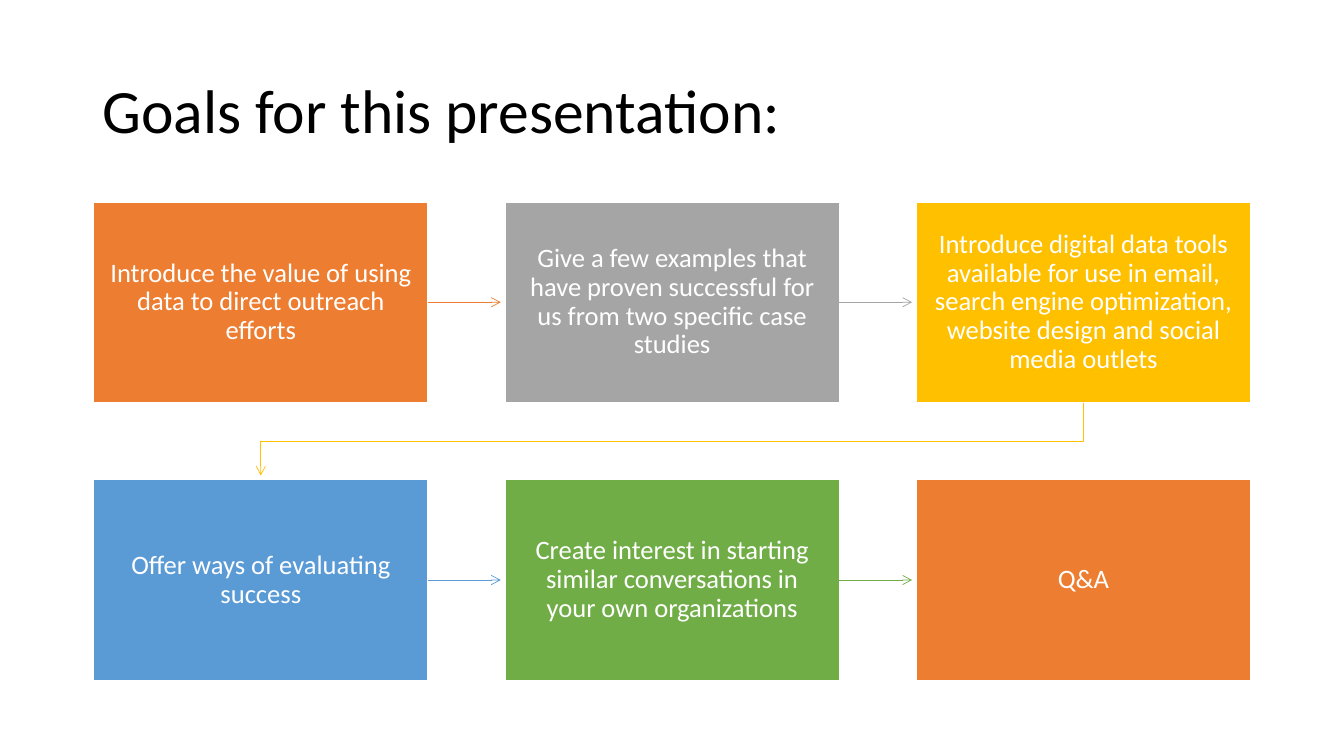
import pptx
import pptx.util
import pptx.dml.color
import pptx.enum.shapes
import pptx.enum.text
import pptx.oxml.ns
import lxml.etree

Pt = pptx.util.Pt
PP_ALIGN = pptx.enum.text.PP_ALIGN


def write(s, text, size, color, align=PP_ALIGN.LEFT, margins=(7.2, 3.6)):
    """Fill a shape with one middle-anchored, wrapped paragraph."""
    tf = s.text_frame
    tf.word_wrap = True
    tf.vertical_anchor = pptx.enum.text.MSO_ANCHOR.MIDDLE
    tf.margin_left = tf.margin_right = Pt(margins[0])
    tf.margin_top = tf.margin_bottom = Pt(margins[1])
    p = tf.paragraphs[0]
    p.alignment = align
    p.line_spacing = 0.9
    r = p.add_run()
    r.text = text
    r.font.name = "Calibri"
    r.font.size = Pt(size)
    r.font.color.rgb = pptx.dml.color.RGBColor.from_string(color)


def style_arrow(s, color):
    """Give a line its colour, width and open arrowhead, without shadow."""
    s.line.color.rgb = pptx.dml.color.RGBColor.from_string(color)
    s.line.width = Pt(0.5)
    qn = pptx.oxml.ns.qn
    ln = s._element.spPr.find(qn("a:ln"))
    lxml.etree.SubElement(ln, qn("a:tailEnd"), type="arrow")
    if s._element.spPr.find(qn("a:effectLst")) is None:
        lxml.etree.SubElement(s._element.spPr, qn("a:effectLst"))


prs = pptx.Presentation()
prs.slide_width, prs.slide_height = Pt(960), Pt(540)
slide = prs.slides.add_slide(prs.slide_layouts[6])

title = slide.shapes.add_textbox(Pt(66), Pt(28.75), Pt(828), Pt(104.4))
write(title, "Goals for this presentation:", 44, "000000")

goals = [
    ("Introduce the value of using data to direct outreach efforts", "ED7D31"),
    ("Give a few examples that have proven successful for us from two specific case studies", "A5A5A5"),
    ("Introduce digital data tools available for use in email, search engine optimization, "
     "website design and social media outlets", "FFC000"),
    ("Offer ways of evaluating success", "5B9BD5"),
    ("Create interest in starting similar conversations in your own organizations", "70AD47"),
    ("Q&A", "ED7D31"),
]
COLUMNS = 3
LEFT, TOP = 66.8, 144.2
BOX_W, BOX_H = 239, 143.4
STEP_X, STEP_Y = 293.8, 198.4
ARROW_GAP = 2.9

# Goal boxes
boxes = []
for i, (text, color) in enumerate(goals):
    row, col = divmod(i, COLUMNS)
    s = slide.shapes.add_shape(
        pptx.enum.shapes.MSO_SHAPE.RECTANGLE,
        Pt(LEFT + col * STEP_X), Pt(TOP + row * STEP_Y), Pt(BOX_W), Pt(BOX_H))
    s.shadow.inherit = False
    s.fill.solid()
    s.fill.fore_color.rgb = pptx.dml.color.RGBColor.from_string(color)
    s.line.color.rgb = pptx.dml.color.RGBColor.from_string("FFFFFF")
    s.line.width = Pt(1)
    write(s, text, 19, "FFFFFF", align=PP_ALIGN.CENTER, margins=(11.7, 12.3))
    boxes.append(s)

# Arrows from each goal to the next
for box, following, (_, color) in zip(boxes, boxes[1:], goals):
    if following.top == box.top:
        y = box.top + box.height // 2
        arrow = slide.shapes.add_connector(
            pptx.enum.shapes.MSO_CONNECTOR.STRAIGHT,
            box.left + box.width, y, following.left - Pt(ARROW_GAP), y)
        arrow.begin_connect(box, 3)
    else:
        start_x = box.left + box.width // 2
        end_x = following.left + following.width // 2
        bottom = box.top + box.height
        middle = (bottom + following.top) // 2
        path = slide.shapes.build_freeform(start_x, bottom)
        path.add_line_segments(
            [(start_x, middle), (end_x, middle), (end_x, following.top - Pt(ARROW_GAP))],
            close=False)
        arrow = path.convert_to_shape()
        arrow.shadow.inherit = False
        arrow.fill.background()
    style_arrow(arrow, color)

prs.save("out.pptx")
